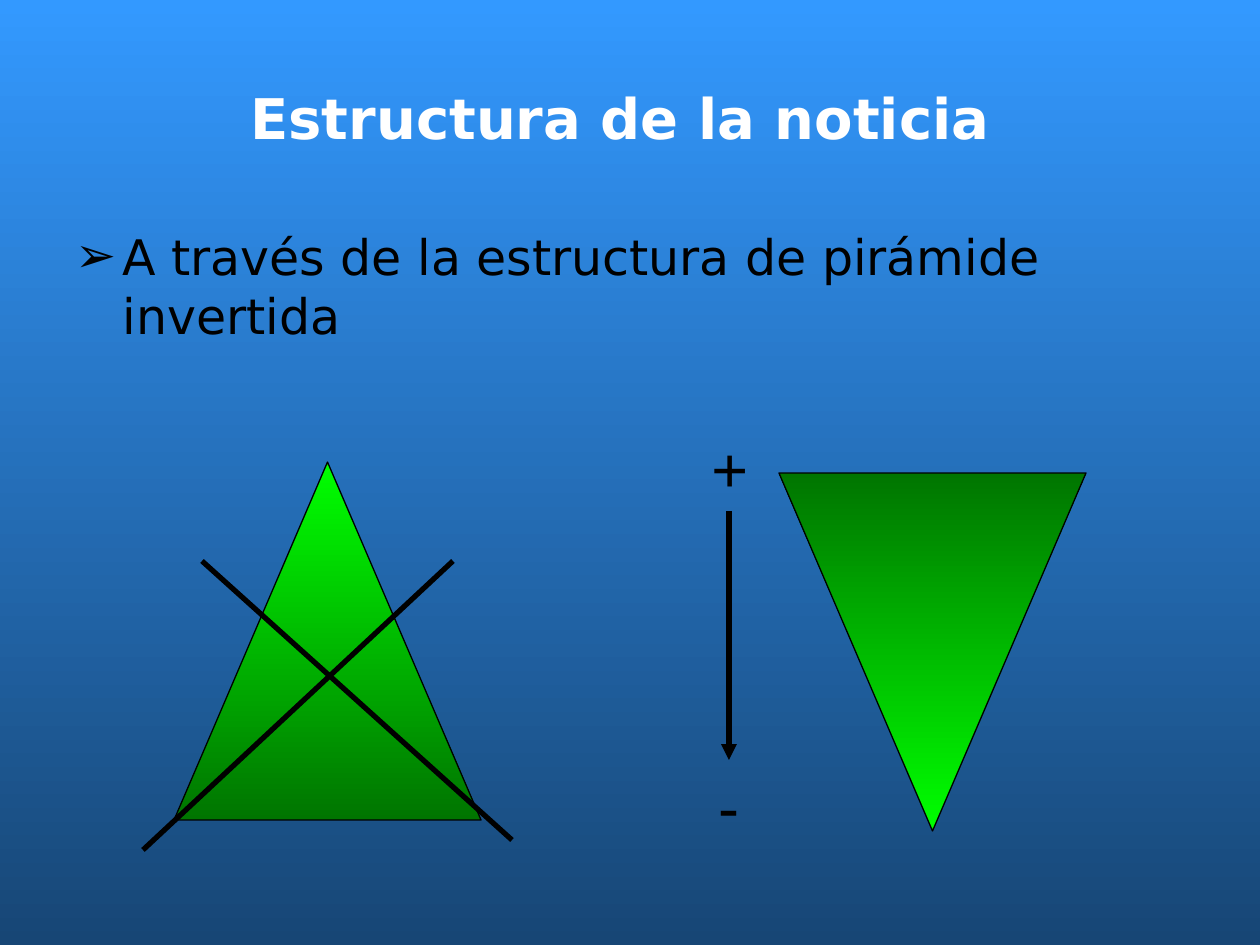
"""Builds the slide on the inverted pyramid structure of a news story."""
from dataclasses import dataclass

from lxml.etree import SubElement
from pptx import Presentation
from pptx.dml.color import RGBColor
from pptx.enum.shapes import MSO_CONNECTOR, MSO_SHAPE
from pptx.enum.text import MSO_ANCHOR, MSO_AUTO_SIZE, PP_ALIGN
from pptx.oxml.ns import qn
from pptx.slide import Slide
from pptx.util import Emu, Pt

EMU_PER_PX = 914400 / 126
SKY = RGBColor(0x33, 0x99, 0xFF)
NAVY = RGBColor(0x17, 0x46, 0x75)
LIME = RGBColor(0x00, 0xFF, 0x00)
GREEN = RGBColor(0x00, 0x75, 0x00)
BLACK = RGBColor(0x00, 0x00, 0x00)
WHITE = RGBColor(0xFF, 0xFF, 0xFF)


def px(length):
    return Emu(round(length * EMU_PER_PX))


@dataclass
class NewsSlide:
    slide: Slide
    text_font: str = "DejaVu Sans"
    sign_font: str = "Arial"

    def gradient(self, fill, top, bottom):
        fill.gradient()
        fill.gradient_angle = 270
        for stop, color, position in zip(fill.gradient_stops, (top, bottom), (0, 1)):
            stop.color.rgb = color
            stop.position = position

    def place(self, placeholder, left, top, width, height):
        placeholder.left, placeholder.top = px(left), px(top)
        placeholder.width, placeholder.height = px(width), px(height)
        placeholder.text_frame.auto_size = MSO_AUTO_SIZE.NONE
        return placeholder.text_frame

    def run(self, paragraph, text, font, size, color, bold=False):
        run = paragraph.add_run()
        run.text = text
        run.font.name = font
        run.font.size = Pt(size)
        run.font.bold = bold
        run.font.color.rgb = color

    def title(self, text, *box):
        frame = self.place(self.slide.shapes.title, *box)
        frame.vertical_anchor = MSO_ANCHOR.MIDDLE
        heading = frame.paragraphs[0]
        heading.alignment = PP_ALIGN.CENTER
        self.run(heading, text, self.text_font, 32, WHITE, bold=True)

    def bullet(self, text, indent, *box):
        frame = self.place(self.slide.placeholders[1], *box)
        point = frame.paragraphs[0]
        point.space_before = Pt(6)
        self.run(point, text, self.text_font, 28, BLACK)
        properties = point._p.get_or_add_pPr()
        properties.set("marL", str(px(indent)))
        properties.set("indent", str(-px(indent)))
        color = SubElement(properties, qn("a:buClr"))
        SubElement(color, qn("a:srgbClr"), val=str(BLACK))
        SubElement(properties, qn("a:buFont"), typeface=self.text_font)
        SubElement(properties, qn("a:buChar"), char="➢")

    def pyramid(self, left, top, rotation=0):
        pyramid = self.slide.shapes.add_shape(
            MSO_SHAPE.ISOSCELES_TRIANGLE, px(left), px(top), px(307), px(358))
        pyramid.shadow.inherit = False
        pyramid.rotation = rotation
        self.gradient(pyramid.fill, LIME, GREEN)
        pyramid.line.color.rgb = BLACK
        pyramid.line.width = Pt(0.75)

    def line(self, start, end, arrow=False):
        stroke = self.slide.shapes.add_connector(
            MSO_CONNECTOR.STRAIGHT, *map(px, start + end))
        stroke.line.color.rgb = BLACK
        stroke.line.width = Pt(3)
        if arrow:
            SubElement(stroke.line._get_or_add_ln(), qn("a:tailEnd"), type="triangle")
        SubElement(stroke._element.spPr, qn("a:effectLst"))

    def sign(self, text, left, top, alignment):
        sign = self.slide.shapes.add_textbox(px(left), px(top), px(79), px(88))
        frame = sign.text_frame
        frame.word_wrap = True
        frame.auto_size = MSO_AUTO_SIZE.SHAPE_TO_FIT_TEXT
        mark = frame.paragraphs[0]
        mark.alignment = alignment
        mark.space_before = Pt(22.5)
        self.run(mark, text, self.sign_font, 36, BLACK)


def main():
    deck = Presentation()
    deck.slide_width, deck.slide_height = px(1260), px(945)
    news = NewsSlide(deck.slides.add_slide(deck.slide_layouts[1]))
    news.gradient(news.slide.background.fill, SKY, NAVY)
    news.title("Estructura de la noticia ", 63, 38, 1134, 158)
    news.bullet("A través de la estructura de pirámide invertida", 47, 63, 220, 1134, 153)
    news.pyramid(779, 473, rotation=180)
    news.pyramid(174, 462)
    news.line((202, 561), (512, 840))
    news.line((453, 561), (143, 850))
    news.sign("+", 699, 423, PP_ALIGN.LEFT)
    news.sign("-", 689, 761, PP_ALIGN.CENTER)
    news.line((729, 511), (729, 760), arrow=True)
    deck.save("out.pptx")


if __name__ == "__main__":
    main()
